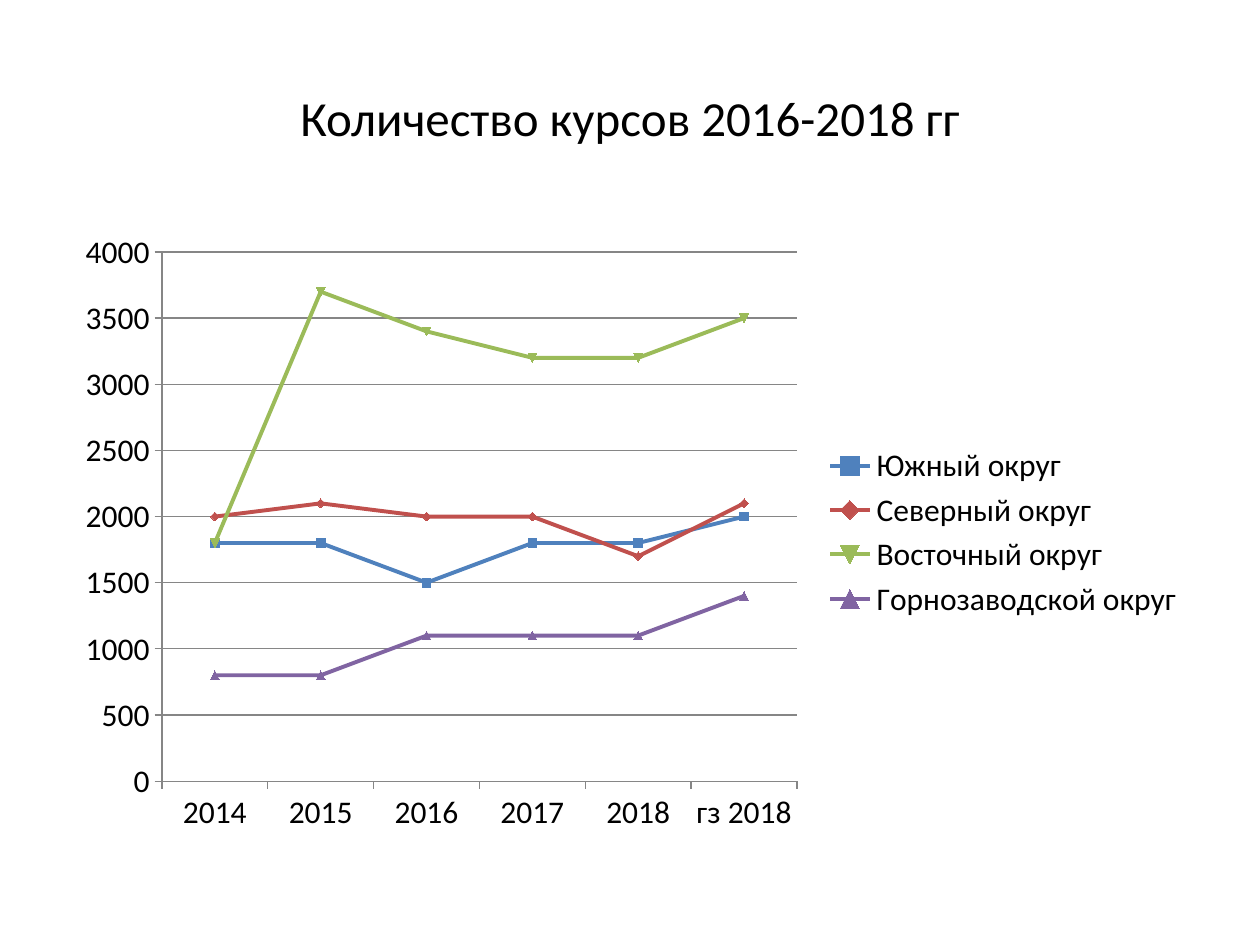
"""Build a slide with a line chart of course counts by district."""
from pptx import Presentation
from pptx.chart.data import CategoryChartData
from pptx.dml.color import RGBColor as Rgb
from pptx.enum.chart import XL_CHART_TYPE as ChartType
from pptx.enum.chart import XL_LEGEND_POSITION as LegendPos
from pptx.enum.chart import XL_TICK_MARK as Tick
from pptx.enum.text import MSO_ANCHOR as Anchor
from pptx.enum.text import PP_ALIGN as Align
from pptx.util import Inches, Pt

TITLE = "Количество курсов 2016-2018 гг"
PERIODS = ["2014", "2015", "2016", "2017", "2018", "гз 2018"]
DISTRICTS = [
    ("Южный округ", "4F81BD", [1800, 1800, 1500, 1800, 1800, 2000]),
    ("Северный округ", "C0504D", [2000, 2100, 2000, 2000, 1700, 2100]),
    ("Восточный округ", "9BBB59", [1800, 3700, 3400, 3200, 3200, 3500]),
    ("Горнозаводской округ", "8064A2", [800, 800, 1100, 1100, 1100, 1400]),
]
THEME = {
    "font": "Calibri", "text": "000000", "axis": "868686",
    "title_size": 28, "chart_size": 18, "series_line": 2.25, "axis_line": 0.75,
}
MARGIN, TITLE_TOP, TITLE_HEIGHT = 0.5, 0.3, 1.25
CHART_TOP, CHART_HEIGHT = 1.75, 4.95
WIDTH, HEIGHT = 10, 7.5


def style_font(font, size):
    font.name = THEME["font"]
    font.size = Pt(size)
    font.color.rgb = Rgb.from_string(THEME["text"])


def write_text(frame, text, size, align=Align.CENTER, anchor=Anchor.MIDDLE):
    frame.word_wrap = True
    frame.vertical_anchor = anchor
    paragraph = frame.paragraphs[0]
    paragraph.alignment = align
    run = paragraph.add_run()
    run.text = text
    style_font(run.font, size)


def style_line(line, color, width):
    line.color.rgb = Rgb.from_string(color)
    line.width = Pt(width)


def add_title(slide):
    title = slide.shapes.title
    title.left, title.top = Inches(MARGIN), Inches(TITLE_TOP)
    title.width, title.height = Inches(WIDTH - 2 * MARGIN), Inches(TITLE_HEIGHT)
    write_text(title.text_frame, TITLE, THEME["title_size"])


def add_course_chart(slide):
    courses = CategoryChartData()
    courses.categories = PERIODS
    for name, _, counts in DISTRICTS:
        courses.add_series(name, counts)
    chart = slide.shapes.add_chart(
        ChartType.LINE_MARKERS, Inches(MARGIN), Inches(CHART_TOP),
        Inches(WIDTH - 2 * MARGIN), Inches(CHART_HEIGHT), courses,
    ).chart
    chart.has_title = False
    style_font(chart.font, THEME["chart_size"])
    chart.has_legend = True
    chart.legend.position = LegendPos.RIGHT
    chart.legend.include_in_layout = False

    counts_axis = chart.value_axis
    counts_axis.minimum_scale, counts_axis.maximum_scale = 0, 4000
    counts_axis.major_unit = 500
    counts_axis.has_major_gridlines = True
    for axis in (chart.category_axis, counts_axis):
        axis.major_tick_mark, axis.minor_tick_mark = Tick.OUTSIDE, Tick.NONE
        style_line(axis.format.line, THEME["axis"], THEME["axis_line"])
    style_line(counts_axis.major_gridlines.format.line, THEME["axis"], THEME["axis_line"])

    plot = chart.plots[0]
    plot.vary_by_categories = False
    for district, (_, color, _) in zip(plot.series, DISTRICTS):
        district.smooth = False
        style_line(district.format.line, color, THEME["series_line"])
        marker = district.marker.format
        marker.fill.solid()
        marker.fill.fore_color.rgb = Rgb.from_string(color)
        style_line(marker.line, color, THEME["axis_line"])


def main():
    deck = Presentation()
    deck.slide_width, deck.slide_height = Inches(WIDTH), Inches(HEIGHT)
    slide = deck.slides.add_slide(deck.slide_layouts[5])
    add_title(slide)
    add_course_chart(slide)
    deck.save("out.pptx")


if __name__ == "__main__":
    main()
